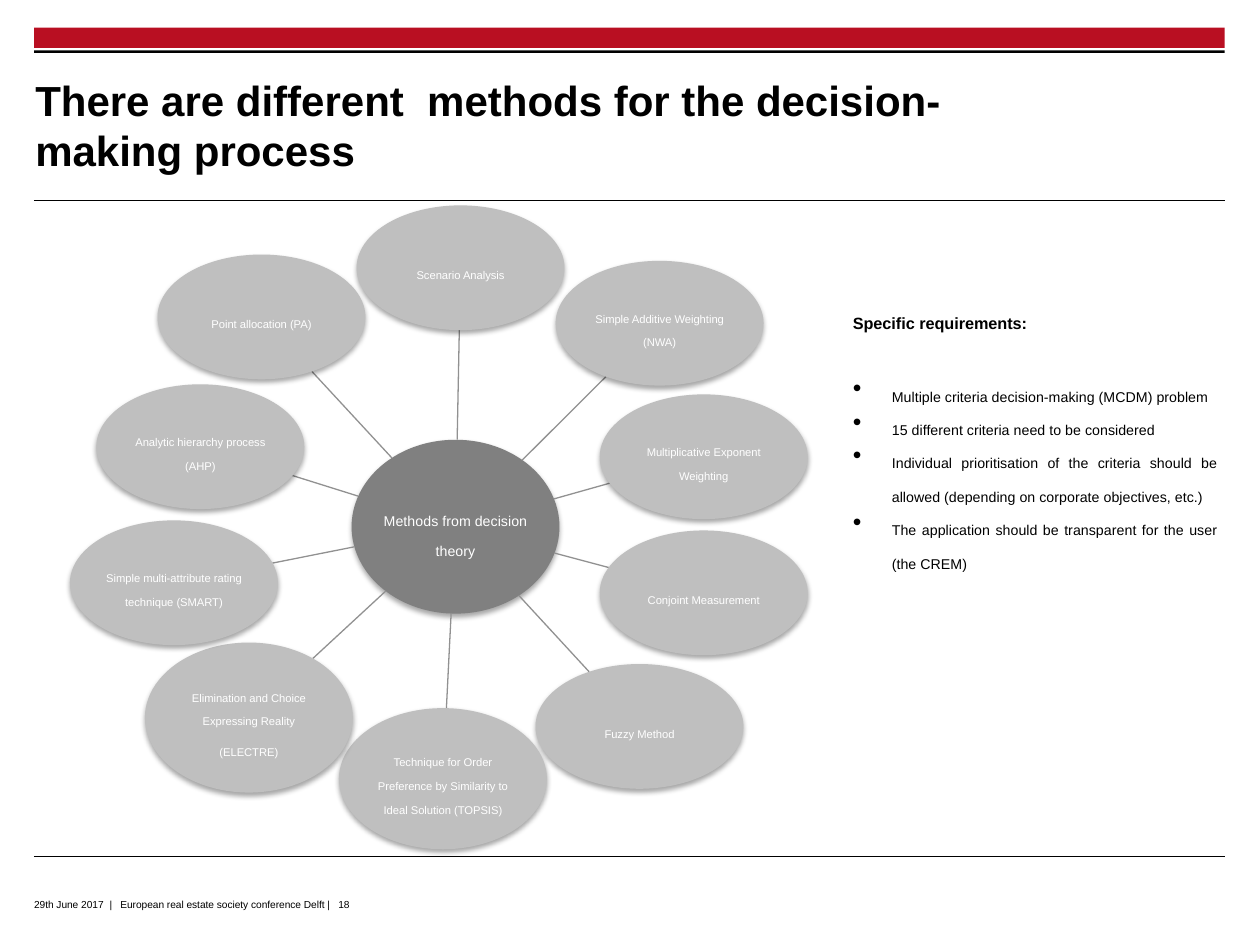
from collections import namedtuple
from math import hypot

from lxml.etree import SubElement
from pptx import Presentation
from pptx.dml.color import RGBColor
from pptx.enum.shapes import MSO_CONNECTOR, MSO_SHAPE
from pptx.enum.text import MSO_ANCHOR, PP_ALIGN
from pptx.oxml.ns import qn
from pptx.util import Inches, Pt

RED = RGBColor(0xB9, 0x0F, 0x22)
BLACK = RGBColor(0, 0, 0)
WHITE = RGBColor(0xFF, 0xFF, 0xFF)
HUB_GREY = RGBColor(0x80, 0x80, 0x80)
NODE_GREY = RGBColor(0xBF, 0xBF, 0xBF)
SPOKE_GREY = RGBColor(0x91, 0x91, 0x91)

COLUMNS, ROWS = 100, 75
CELL = Inches(0.1)

Box = namedtuple("Box", "left top width height")
Oval = namedtuple("Oval", "x y width height")

NODE_WIDTH, NODE_HEIGHT = 16.5, 9.9
HUB = Oval(30.55, 25.5, NODE_WIDTH, 13.8)
METHODS = [
    (30.95, 4.95, NODE_HEIGHT, ["Scenario Analysis"]),
    (46.75, 9.35, NODE_HEIGHT, ["Simple Additive Weighting (NWA)"]),
    (50.25, 19.95, NODE_HEIGHT, ["Multiplicative Exponent Weighting"]),
    (50.25, 30.75, NODE_HEIGHT, ["Conjoint Measurement"]),
    (45.15, 41.35, NODE_HEIGHT, ["Fuzzy Method"]),
    (29.55, 45.5, 11.2, ["Technique for Order Preference by Similarity to Ideal Solution (TOPSIS)"]),
    (14.15, 40.65, 11.9, ["Elimination and Choice Expressing Reality", "(ELECTRE)"]),
    (8.2, 29.95, NODE_HEIGHT, ["Simple multi-attribute rating technique (SMART)"]),
    (10.3, 19.15, NODE_HEIGHT, ["Analytic hierarchy process (AHP)"]),
    (15.15, 8.85, NODE_HEIGHT, ["Point allocation (PA)"]),
]
REQUIREMENTS = [
    "Multiple criteria decision-making (MCDM) problem",
    "15 different criteria need to be considered",
    "Individual prioritisation of the criteria should be allowed "
    "(depending on corporate objectives, etc.)",
    "The application should be transparent for the user (the CREM)",
]


def cells(*amounts):
    return [round(amount * CELL) for amount in amounts]


def add_run(paragraph, text, size, color=BLACK, bold=False, lowered=True):
    run = paragraph.add_run()
    run.text = text
    run.font.name = "Arial"
    run.font.size = Pt(size)
    run.font.bold = bold
    run.font.color.rgb = color
    if lowered:
        run._r.get_or_add_rPr().set("baseline", "-25000")


def set_insets(frame, inset):
    frame.margin_left = frame.margin_right = inset
    frame.margin_top = frame.margin_bottom = inset


def add_text_frame(slide, box, inset):
    frame = slide.shapes.add_textbox(*cells(*box)).text_frame
    frame.word_wrap = True
    set_insets(frame, inset)
    return frame


def add_bar(slide, box, color):
    bar = slide.shapes.add_shape(MSO_SHAPE.RECTANGLE, *cells(*box))
    bar.shadow.inherit = False
    bar.fill.solid()
    bar.fill.fore_color.rgb = color
    bar.line.fill.background()


def add_line(slide, start, end, color, weight):
    line = slide.shapes.add_connector(
        MSO_CONNECTOR.STRAIGHT, *cells(*start), *cells(*end))
    line.line.color.rgb = color
    line.line.width = Pt(weight)
    SubElement(line._element.spPr, qn("a:effectLst"))


def add_soft_shadow(shape):
    shape.shadow.inherit = False
    effects = shape._element.spPr.find(qn("a:effectLst"))
    shadow = SubElement(effects, qn("a:outerShdw"), blurRad=str(Pt(3.1)),
                        dist=str(Pt(1.8)), dir="5400000", rotWithShape="0")
    tint = SubElement(shadow, qn("a:srgbClr"), val=str(BLACK))
    SubElement(tint, qn("a:alpha"), val="35000")


def add_oval(slide, box, oval, labels, size, color):
    shape = slide.shapes.add_shape(MSO_SHAPE.OVAL, *cells(
        box.left + oval.x - oval.width / 2, box.top + oval.y - oval.height / 2,
        oval.width, oval.height))
    shape.fill.solid()
    shape.fill.fore_color.rgb = color
    shape.line.fill.background()
    add_soft_shadow(shape)
    frame = shape.text_frame
    frame.word_wrap = True
    frame.vertical_anchor = MSO_ANCHOR.MIDDLE
    set_insets(frame, Inches(0.01))
    for index, label in enumerate(labels):
        paragraph = frame.add_paragraph() if index else frame.paragraphs[0]
        paragraph.alignment = PP_ALIGN.CENTER
        paragraph.line_spacing = 0.9
        paragraph.space_after = Pt(round(size * 0.35))
        add_run(paragraph, label, size, WHITE)


def edge_point(box, oval, toward):
    dx, dy = toward.x - oval.x, toward.y - oval.y
    reach = 1 / hypot(dx / (oval.width / 2), dy / (oval.height / 2))
    return box.left + oval.x + dx * reach, box.top + oval.y + dy * reach


def add_header(slide, box):
    add_bar(slide, Box(box.left, box.top, box.width, 1.6), RED)
    add_bar(slide, Box(box.left, box.top + 1.8, box.width, 0.2), BLACK)
    title = add_text_frame(slide, Box(box.left + 0.1, box.top + 3.1, 75.2, 9.2), 0)
    title.vertical_anchor = MSO_ANCHOR.MIDDLE
    add_run(title.paragraphs[0],
            "There are different  methods for the decision-making process",
            24, bold=True, lowered=False)
    bottom = box.top + box.height
    add_line(slide, (box.left, bottom), (box.left + box.width, bottom), BLACK, 0.6)


def add_methods_diagram(slide, box):
    add_oval(slide, box, HUB, ["Methods from decision theory"], 14, HUB_GREY)
    for x, y, height, labels in METHODS:
        node = Oval(x, y, NODE_WIDTH, height)
        add_line(slide, edge_point(box, HUB, node), edge_point(box, node, HUB),
                 SPOKE_GREY, 0.75)
        add_oval(slide, box, node, labels, 11, NODE_GREY)


def add_requirements(slide, box):
    frame = add_text_frame(slide, box, Inches(0.1))
    frame.margin_top = frame.margin_bottom = Inches(0.05)
    heading = frame.paragraphs[0]
    heading.alignment = PP_ALIGN.JUSTIFY
    add_run(heading, "Specific requirements:", 16, bold=True)
    for index, requirement in enumerate(REQUIREMENTS):
        paragraph = frame.add_paragraph()
        paragraph.alignment = PP_ALIGN.JUSTIFY
        if index == 0:
            paragraph.space_before = Pt(22)
        properties = paragraph._p.get_or_add_pPr()
        properties.set("marL", str(Inches(0.31)))
        properties.set("indent", str(-Inches(0.31)))
        SubElement(properties, qn("a:buFont"), typeface="Arial")
        SubElement(properties, qn("a:buChar"), char="•")
        add_run(paragraph, requirement, 14)


def add_footer(slide, box):
    add_line(slide, (box.left, box.top), (box.left + box.width, box.top), BLACK, 0.6)
    frame = add_text_frame(slide, Box(box.left, box.top + 2.4, box.width, 2.5), 0)
    paragraph = frame.paragraphs[0]
    tabs = SubElement(paragraph._p.get_or_add_pPr(), qn("a:tabLst"))
    for stop in cells(6, 6.85, 24.15):
        SubElement(tabs, qn("a:tab"), pos=str(stop), algn="l")
    add_run(paragraph,
            "29th June 2017\t|\tEuropean real estate society conference Delft |\t18", 10)


def main():
    presentation = Presentation()
    presentation.slide_width, presentation.slide_height = cells(COLUMNS, ROWS)
    slide = presentation.slides.add_slide(presentation.slide_layouts[6])
    add_header(slide, Box(2.7, 2.2, 94.5, 13.7))
    add_methods_diagram(slide, Box(5.6, 16.3, 58.5, 51.1))
    add_requirements(slide, Box(66.7, 22.9, 30.9, 35))
    add_footer(slide, Box(2.7, 68, 94.5, 4.9))
    presentation.save("out.pptx")


if __name__ == "__main__":
    main()
